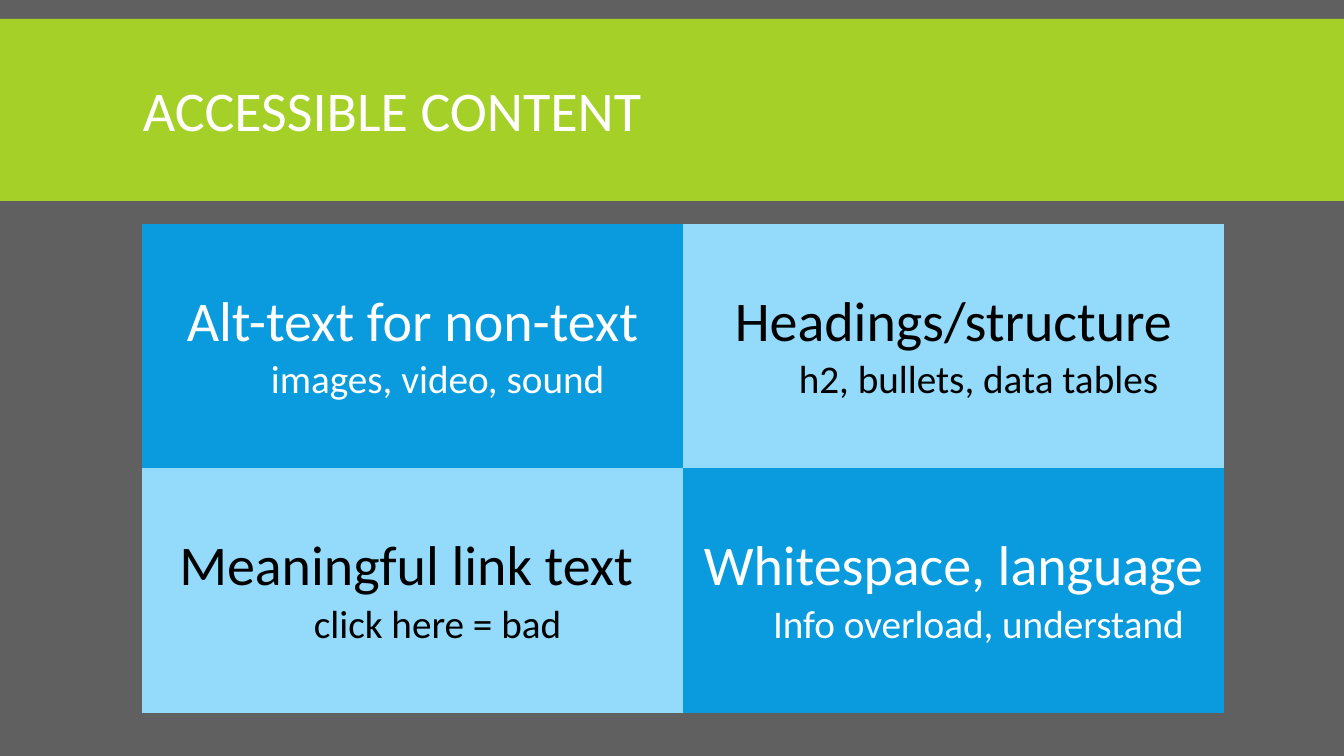
from dataclasses import dataclass

from pptx import Presentation
from pptx.dml.color import RGBColor
from pptx.enum.shapes import MSO_SHAPE
from pptx.enum.text import MSO_ANCHOR, PP_ALIGN
from pptx.util import Emu, Pt

RECT = MSO_SHAPE.RECTANGLE
MIDDLE = MSO_ANCHOR.MIDDLE
LEFT, CENTER = PP_ALIGN.LEFT, PP_ALIGN.CENTER
PLAIN = "{2D5ABB26-0587-4C30-8999-92F81FD0307C}"  # table style without grid
SCALE = 914400 / 100.8


@dataclass(frozen=True)
class Theme:
    back: str = "606060"
    band: str = "A5D028"
    deep: str = "099BDD"
    pale: str = "93DAFB"
    light: str = "FFFFFF"
    dark: str = "000000"
    font: str = "Calibri"
    head: int = 40
    note: int = 28


THEME = Theme()
TOPICS = [
    [("Alt-text for non-text", "images, video, sound"),
     ("Headings/structure", "h2, bullets, data tables")],
    [("Meaningful link text ", "click here = bad"),
     ("Whitespace, language", "Info overload, understand")],
]


def px(count):
    return Emu(round(count * SCALE))


def box(*sides):
    return [px(side) for side in sides]


def assign(item, values):
    for name, value in values.items():
        setattr(item, name, value)


def paint(fill, color):
    fill.solid()
    fill.fore_color.rgb = RGBColor.from_string(color)


def write(para, text, size, color, **values):
    assign(para, values)
    run = para.add_run()
    run.text = text
    assign(run.font, {"name": THEME.font, "size": Pt(size)})
    run.font.color.rgb = RGBColor.from_string(color)


def add_band(slide):
    band = slide.shapes.add_shape(RECT, *box(0, 19, 1344, 182))
    band.shadow.inherit = False
    paint(band.fill, THEME.band)
    band.line.fill.background()


def add_title(slide, text):
    frame = slide.shapes.add_textbox(*box(133, 31, 1079, 166)).text_frame
    assign(frame, {"word_wrap": True, "vertical_anchor": MIDDLE})
    write(frame.paragraphs[0], text, THEME.head, THEME.light,
          alignment=LEFT, line_spacing=0.85)


def fill_cell(cell, topic, deep):
    head, note = topic
    color = THEME.light if deep else THEME.dark
    paint(cell.fill, THEME.deep if deep else THEME.pale)
    cell.vertical_anchor = MIDDLE
    frame = cell.text_frame
    write(frame.paragraphs[0], head, THEME.head, color, alignment=CENTER)
    para = frame.add_paragraph()
    write(para, note, THEME.note, color, alignment=CENTER, level=1)
    props = para._p.get_or_add_pPr()
    props.set("marL", str(px(50)))
    props.set("indent", "0")


def add_grid(slide, topics):
    rows, cols = len(topics), len(topics[0])
    frame = slide.shapes.add_table(
        rows, cols, *box(142, 224, 541 * cols, 244.5 * rows))
    table = frame.table
    assign(table, {"first_row": False, "horz_banding": False})
    table._tbl.tblPr[0].text = PLAIN
    for r, line in enumerate(topics):
        for c, topic in enumerate(line):
            fill_cell(table.cell(r, c), topic, (r + c) % 2 == 0)


def main():
    deck = Presentation()
    assign(deck, {"slide_width": px(1344), "slide_height": px(756)})
    slide = deck.slides.add_slide(deck.slide_layouts[6])
    paint(slide.background.fill, THEME.back)

    # Header
    add_band(slide)
    add_title(slide, "ACCESSIBLE CONTENT")

    # Checkerboard of topics
    add_grid(slide, TOPICS)

    deck.save("out.pptx")


if __name__ == "__main__":
    main()
